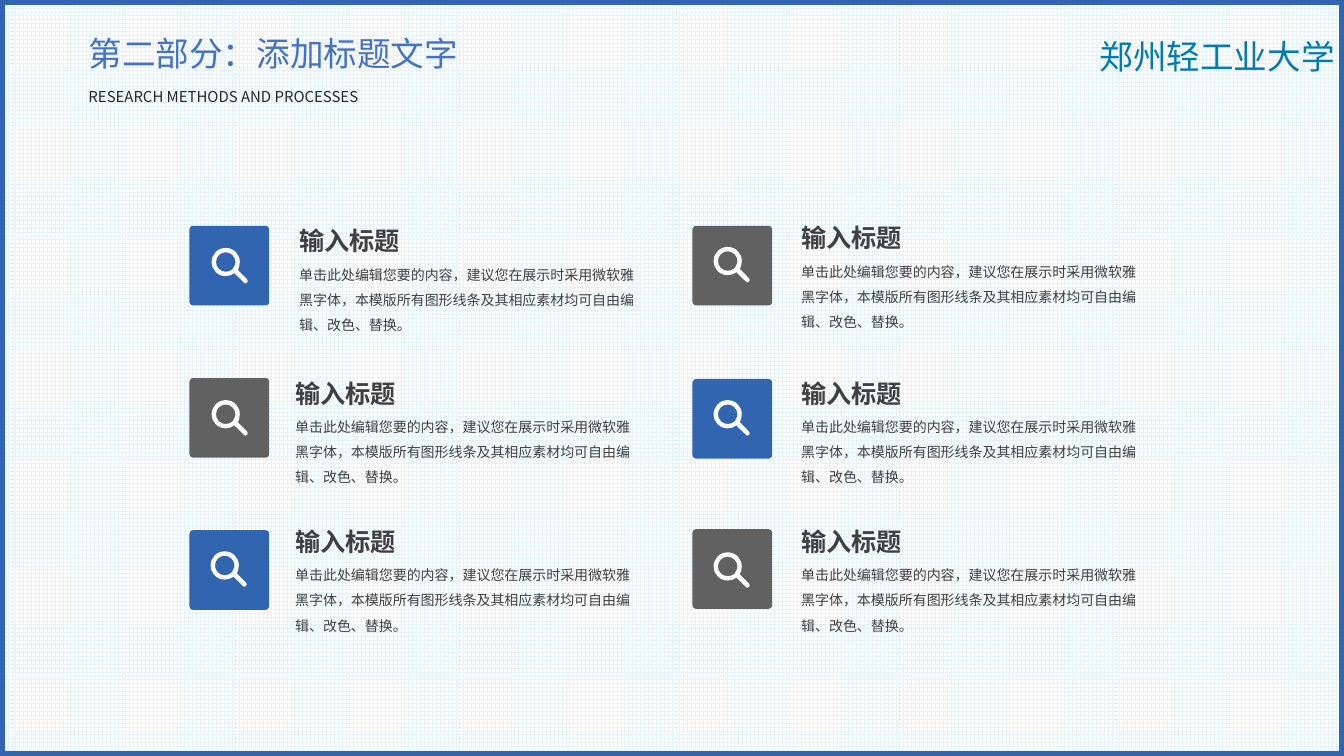
from pptx import Presentation, util as u
from pptx.dml import color
from pptx.enum import dml, shapes, text
from pptx.oxml import ns

PX = 9144
FONT = "Noto Sans CJK SC"
BLUE, GRAY, WHITE, INK = "3165B0", "616161", "FFFFFF", "404040"
rgb = color.RGBColor.from_string
BODY = "单击此处编辑您要的内容，建议您在展示时采用微软雅黑字体，本模版所有图形线条及其相应素材均可自由编辑、改色、替换。"


def add_text(box, words, size, ink, wrap=False, grow=False, bold=None, spacing=None):
    frame = slide.shapes.add_textbox(*[v * PX for v in box]).text_frame
    frame.word_wrap = wrap
    frame.auto_size = text.MSO_AUTO_SIZE.SHAPE_TO_FIT_TEXT if grow else text.MSO_AUTO_SIZE.NONE
    paragraph = frame.paragraphs[0]
    paragraph.line_spacing = spacing
    run = paragraph.add_run()
    run.text = words
    run.font.size = u.Pt(size)
    run.font.bold = bold
    run.font.name = FONT
    run.font.color.rgb = rgb(ink)
    east_asian = run.font._element.makeelement(ns.qn("a:ea"), {"typeface": FONT})
    run.font._element.append(east_asian)


def add_magnifier(left, top):
    builder = slide.shapes.build_freeform(*lens_outline[0], scale=PX / 10)
    builder.add_line_segments(lens_outline[1:], close=True)
    builder.move_to(*lens_hole[0])
    builder.add_line_segments(lens_hole[1:], close=True)
    magnifier = builder.convert_to_shape(left * PX, top * PX)
    lines = list(magnifier._element.iter(ns.qn("a:lnTo")))
    for start in range(0, len(lines), 3):
        curve = lines[start].makeelement(ns.qn("a:cubicBezTo"), {})
        lines[start].addprevious(curve)
        for line in lines[start:start + 3]:
            curve.append(line[0])
            line.getparent().remove(line)
    return magnifier


presentation = Presentation()
presentation.slide_width = u.Inches(13.3333)
presentation.slide_height = 750 * PX
slide = presentation.slides.add_slide(presentation.slide_layouts[6])

background = slide.background.fill
background.patterned()
background.pattern = dml.MSO_PATTERN.LARGE_GRID
background.fore_color.rgb = rgb("E4F2FC")
background.back_color.rgb = rgb(WHITE)

add_text((1081, 31, 489, 50), "郑州轻工业大学", 24, "007CB1", wrap=True, grow=True)

border = slide.shapes.add_shape(
    shapes.MSO_SHAPE.RECTANGLE, 0, 0, presentation.slide_width, presentation.slide_height)
border.shadow.inherit = False
border.fill.background()
border.line.color.rgb = rgb(BLUE)
border.line.width = u.Pt(6.75)

add_text((78, 28, 390, 50), "第二部分：添加标题文字", 24, "4472C4", grow=True)
add_text((78, 82, 296, 28), "RESEARCH METHODS AND PROCESSES", 10.7, "262626", grow=True)

lens_outline = [
    (140, 0),
    (60, 0), (0, 63), (0, 140),
    (0, 217), (60, 280), (140, 280),
    (170, 280), (200, 270), (230, 250),
    (230, 253), (231, 256), (234, 259),
    *[(320, 344)] * 3,
    (326, 350), (330, 352), (335, 352),
    (340, 352), (348, 350), (352, 344),
    (360, 335), (360, 320), (352, 312),
    *[(267, 225)] * 3,
    (264, 222), (262, 221), (260, 220),
    (270, 200), (280, 170), (280, 140),
    (280, 63), (220, 0), (140, 0),
]
lens_hole = [
    (140, 43),
    (190, 43), (237, 86), (237, 140),
    (237, 158), (230, 176), (220, 190),
    *[(213, 205)] * 3,
    *[(200, 218)] * 3,
    (184, 230), (162, 237), (140, 237),
    (86, 237), (43, 194), (43, 140),
    (43, 86), (86, 43), (140, 43),
]

cards = [
    (188, 224, BLUE, 210, 246, 287, 219),
    (188, 375, GRAY, 210, 397, 283, 370),
    (188, 526, BLUE, 209, 547, 283, 517),
    (687, 224, GRAY, 708, 245, 785, 216),
    (687, 376, BLUE, 708, 397, 785, 370),
    (687, 525, GRAY, 708, 548, 785, 517),
]
for tile_x, tile_y, tint, icon_x, icon_y, text_x, text_y in cards:
    tile = slide.shapes.add_shape(
        shapes.MSO_SHAPE.ROUNDED_RECTANGLE, tile_x * PX, tile_y * PX, 79 * PX, 79 * PX)
    tile.adjustments[0] = 0.046
    magnifier = add_magnifier(icon_x, icon_y)

    for shape, fill in ((tile, tint), (magnifier, WHITE)):
        shape.shadow.inherit = False
        shape.fill.solid()
        shape.fill.fore_color.rgb = rgb(fill)
        shape.line.fill.background()

    add_text((text_x, text_y + 32, 355, 73), BODY, 10, INK, wrap=True, spacing=u.Pt(18))
    add_text((text_x, text_y, 287, 46), "输入标题", 18, INK, bold=True)

presentation.save("out.pptx")
